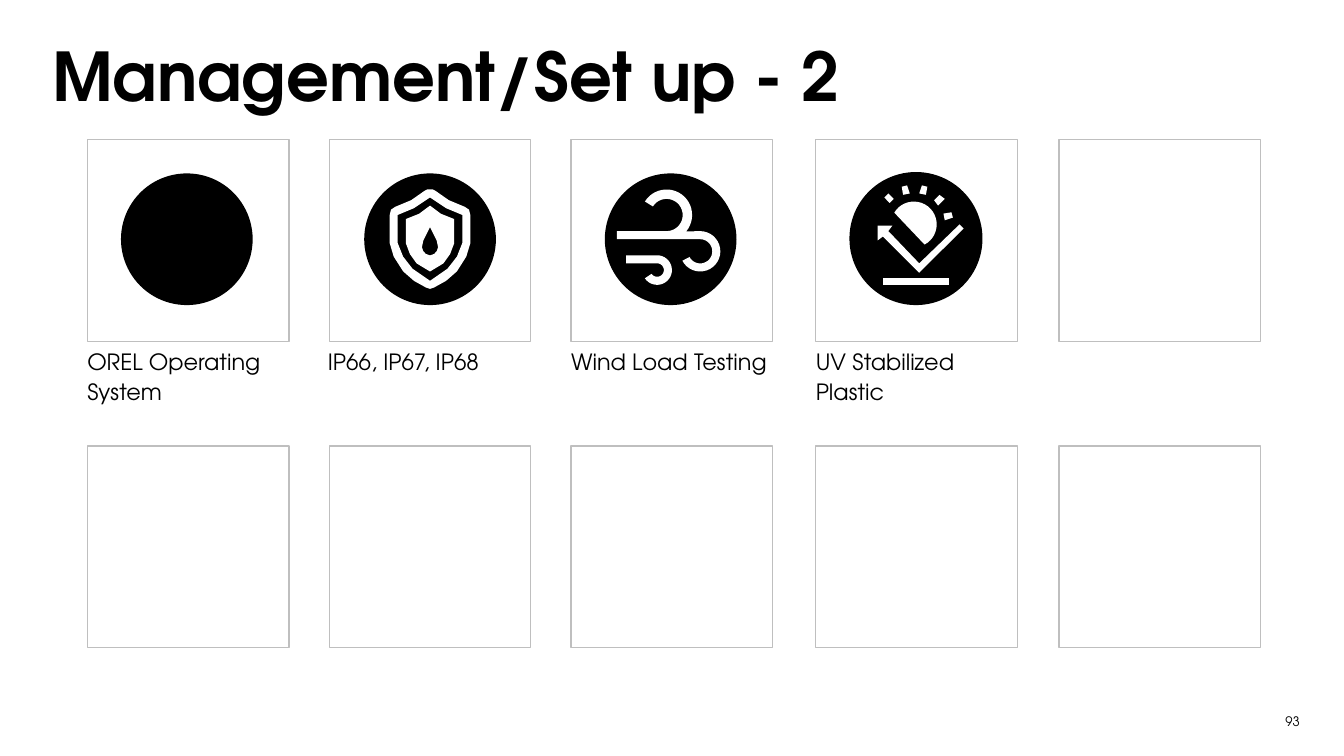
import math

from pptx import Presentation
from pptx import util as u
from pptx.dml.color import RGBColor
from pptx.enum import shapes, text

Inches, Pt = u.Inches, u.Pt
COLORS = {"ink": "000000", "icon": "FFFFFF", "frame": "BFBFBF"}
RGB = {name: RGBColor.from_string(value) for name, value in COLORS.items()}
FONT = "TeX Gyre Adventor"

prs = Presentation()
prs.slide_width = Inches(10)
prs.slide_height = prs.slide_width * 9 // 16
slide = prs.slides.add_slide(prs.slide_layouts[6])


def arc(cx, cy, radius, start, end, steps=24):
    angles = [math.radians(start + (end - start) * i / steps) for i in range(steps + 1)]
    return [(cx + radius * math.cos(a), cy + radius * math.sin(a)) for a in angles]


def add_text(box, content, size, bold=False):
    left, top, width, height = map(Inches, box)
    frame = slide.shapes.add_textbox(left, top, width, height).text_frame
    frame.word_wrap = True
    frame.text = content
    paragraph = frame.paragraphs[0]
    font = paragraph.runs[0].font
    font.name, font.size, font.bold = FONT, Pt(size), bold
    font.color.rgb = RGB["ink"]
    return frame, paragraph


number_frame, number = add_text((9.07, 5.17, 0.7, 0.4), "93", 7)
number_frame.vertical_anchor = text.MSO_ANCHOR.MIDDLE
number.alignment = text.PP_ALIGN.RIGHT

columns = [0.65, 2.45, 4.25, 6.07, 7.88]
for top in (1.04, 3.32):
    for left in columns:
        tile = slide.shapes.add_shape(
            shapes.MSO_SHAPE.RECTANGLE, Inches(left), Inches(top), Inches(1.5), Inches(1.5)
        )
        tile.shadow.inherit = False
        tile.fill.background()
        tile.line.color.rgb = RGB["frame"]
        tile.line.width = Pt(0.75)

title_frame, title = add_text((0.39, 0.32, 8.14, 0.55), "Management/Set up - 2", 36, True)
title.line_spacing = 0.9
text_frames = [title_frame]

captions = [
    (0.65, "OREL Operating System", 0.43),
    (2.44, "IP66, IP67, IP68", 0.22),
    (4.25, "Wind Load Testing", 0.21),
    (6.07, "UV Stabilized Plastic", 0.45),
]
for left, caption, height in captions:
    caption_frame, paragraph = add_text((left, 2.57, 1.5, height), caption, 12)
    paragraph.line_spacing = Pt(16)
    paragraph.space_before = Pt(2.4)
    text_frames.append(caption_frame)

for frame in text_frames:
    frame.margin_left = frame.margin_top = frame.margin_right = frame.margin_bottom = 0
    frame.auto_size = text.MSO_AUTO_SIZE.SHAPE_TO_FIT_TEXT

solids = [(shapes.MSO_SHAPE.OVAL, (left, 1.29, 0.98, 0.98), "ink") for left in (0.9, 2.71, 4.5)]
solids.append((shapes.MSO_SHAPE.OVAL, (6.32, 1.28, 0.99, 0.99), "ink"))
solids.append((shapes.MSO_SHAPE.RECTANGLE, (6.57, 2.07, 0.49, 0.05), "icon"))
for preset, box, color in solids:
    solid = slide.shapes.add_shape(preset, *map(Inches, box))
    solid.shadow.inherit = False
    solid.fill.solid()
    solid.fill.fore_color.rgb = RGB[color]
    solid.line.fill.background()

shield_halves = {
    "rim": [(0, 1.41), (0.02, 1.41), (0.04, 1.42), (0.14, 1.49), (0.26, 1.54), (0.29, 1.56),
            (0.3, 1.6), (0.3, 1.81), (0.27, 1.91), (0.2, 2.02), (0.12, 2.09), (0.03, 2.14), (0, 2.15)],
    "rim_hole": [(0, 1.47), (0.12, 1.55), (0.24, 1.6), (0.24, 1.81), (0.2, 1.91), (0.13, 2), (0, 2.09)],
    "core": [(0, 1.53), (0.08, 1.59), (0.18, 1.63), (0.18, 1.81), (0.15, 1.89), (0.1, 1.96), (0, 2.02)],
    "drop": [(0, 1.69), (0.05, 1.79), (0.06, 1.84), (0.05, 1.87), (0.03, 1.89), (0, 1.9)],
}
shield = {
    part: [(3.2 + x, y) for x, y in half] + [(3.2 - x, y) for x, y in reversed(half[1:-1])]
    for part, half in shield_halves.items()
}

gust = (
    [(4.59, 1.72)]
    + arc(4.96, 1.6, 0.12, 90, -148)
    + arc(4.96, 1.6, 0.19, -148, 40)
    + arc(5.21, 1.87, 0.15, -90, 152)
    + arc(5.21, 1.87, 0.09, 152, -90)
    + [(4.59, 1.78)]
)
breeze = [(4.66, 1.9)] + arc(4.89, 2.01, 0.11, -90, 146) + arc(4.89, 2.01, 0.05, 146, -90) + [(4.66, 1.96)]
deflected_ray = [(6.84, 2.03), (7.17, 1.7), (7.14, 1.67), (6.84, 1.96), (6.61, 1.72),
                 (6.64, 1.68), (6.53, 1.68), (6.53, 1.79), (6.57, 1.76)]
half_sun = arc(6.8, 1.67, 0.17, 62, -149)
sunbeams = [
    [(6.9, 1.39), (6.86, 1.38), (6.84, 1.44), (6.89, 1.45)],
    [(6.77, 1.44), (6.75, 1.38), (6.71, 1.39), (6.72, 1.45)],
    [(6.65, 1.48), (6.61, 1.44), (6.58, 1.47), (6.62, 1.51)],
    [(7.03, 1.64), (7.09, 1.62), (7.08, 1.58), (7.02, 1.59)],
    [(7.03, 1.48), (6.99, 1.45), (6.95, 1.49), (6.98, 1.53)],
]

icon_parts = [[shield["rim"], shield["rim_hole"]], [shield["core"], shield["drop"]]]
icon_parts += [[outline] for outline in (gust, breeze, deflected_ray, half_sun, *sunbeams)]
for outlines in icon_parts:
    outlines = [[(Inches(x), Inches(y)) for x, y in outline] for outline in outlines]
    builder = slide.shapes.build_freeform(*outlines[0][0])
    builder.add_line_segments(outlines[0][1:])
    for hole in outlines[1:]:
        builder.move_to(*hole[0])
        builder.add_line_segments(hole[1:])
    glyph = builder.convert_to_shape()
    glyph.shadow.inherit = False
    glyph.fill.solid()
    glyph.fill.fore_color.rgb = RGB["icon"]
    glyph.line.fill.background()

prs.save("out.pptx")
